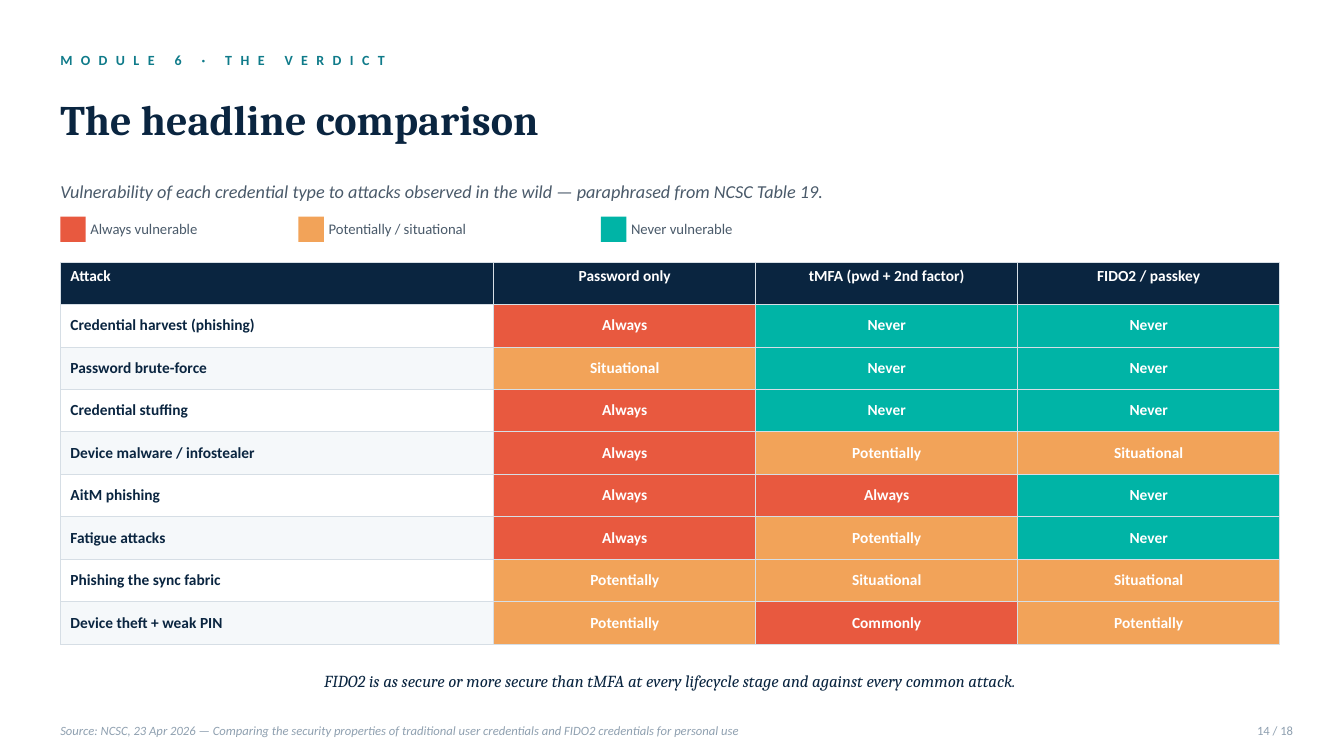
from dataclasses import dataclass

from lxml.etree import SubElement
from pptx import Presentation
from pptx.dml.color import RGBColor
from pptx.enum.shapes import MSO_SHAPE
from pptx.enum.text import MSO_ANCHOR, MSO_AUTO_SIZE, PP_ALIGN
from pptx.oxml.ns import qn
from pptx.util import Cm, Pt

# Content
EYEBROW = "MODULE 6 · THE VERDICT"
TITLE = "The headline comparison"
SUBTITLE = ("Vulnerability of each credential type to attacks observed in the wild"
            " — paraphrased from NCSC Table 19.")
LEGEND = [  # label, rating colour, left in cm
    ("Always vulnerable", "high", 1.52),
    ("Potentially / situational", "medium", 7.52),
    ("Never vulnerable", "low", 15.14),
]
HEADERS = ["Attack", "Password only", "tMFA (pwd + 2nd factor)", "FIDO2 / passkey"]
ATTACKS = [
    ("Credential harvest (phishing)", "Always", "Never", "Never"),
    ("Password brute-force", "Situational", "Never", "Never"),
    ("Credential stuffing", "Always", "Never", "Never"),
    ("Device malware / infostealer", "Always", "Potentially", "Situational"),
    ("AitM phishing", "Always", "Always", "Never"),
    ("Fatigue attacks", "Always", "Potentially", "Never"),
    ("Phishing the sync fabric", "Potentially", "Situational", "Situational"),
    ("Device theft + weak PIN", "Potentially", "Commonly", "Potentially"),
]
RATING_LEVEL = {"Always": "high", "Commonly": "high", "Potentially": "medium",
                "Situational": "medium", "Never": "low"}
TAKEAWAY = ("FIDO2 is as secure or more secure than tMFA at every lifecycle stage"
            " and against every common attack.")
SOURCE = ("Source: NCSC, 23 Apr 2026 — Comparing the security properties of traditional"
          " user credentials and FIDO2 credentials for personal use")
PAGE = "14 / 18"


@dataclass(frozen=True)
class Theme:
    navy: str = "0A2540"
    teal: str = "0F7B8A"
    slate: str = "4A5A6A"
    muted: str = "8FA0B0"
    white: str = "FFFFFF"
    stripe: str = "F5F8FA"
    border: str = "D6DEE5"
    high: str = "E8593F"
    medium: str = "F2A359"
    low: str = "00B4A6"
    body: str = "Calibri"
    heading: str = "Cambria"
    eyebrow_size: float = 10
    title_size: float = 30
    subtitle_size: float = 13
    legend_size: float = 10.5
    table_size: float = 11
    takeaway_size: float = 12
    footer_size: float = 9


THEME = Theme()
LEFT, WIDTH = 1.52, 30.73
ROW_HEIGHT = 1.07
COLUMN_WIDTHS = [10.92, 6.6, 6.6, 6.6]


def style(size, color, name=THEME.body, bold=False, italic=False):
    return {"size": Pt(size), "name": name, "bold": bold, "italic": italic,
            "color": color}


def write(text_frame, text, font_style, alignment=PP_ALIGN.LEFT):
    paragraph = text_frame.paragraphs[0]
    paragraph.alignment = alignment
    run = paragraph.add_run()
    run.text = text
    for attribute, value in font_style.items():
        if attribute == "color":
            run.font.color.rgb = RGBColor.from_string(value)
        else:
            setattr(run.font, attribute, value)
    return run


def fill_with(target, color):
    target.fill.solid()
    target.fill.fore_color.rgb = RGBColor.from_string(color)


def format_frame(text_frame):
    frame_format = {"margin_left": 0, "margin_right": 0, "margin_top": 0,
                    "margin_bottom": 0, "word_wrap": True,
                    "auto_size": MSO_AUTO_SIZE.NONE,
                    "vertical_anchor": MSO_ANCHOR.MIDDLE}
    for attribute, value in frame_format.items():
        setattr(text_frame, attribute, value)


def add_label(slide, box, text, font_style, alignment=PP_ALIGN.LEFT):
    shape = slide.shapes.add_textbox(*map(Cm, box))
    format_frame(shape.text_frame)
    return write(shape.text_frame, text, font_style, alignment)


def add_borders(cell):
    properties = cell._tc.get_or_add_tcPr()
    for position, side in enumerate(("a:lnL", "a:lnR", "a:lnT", "a:lnB")):
        line = SubElement(properties, qn(side), w=str(Pt(0.5)))
        SubElement(SubElement(line, qn("a:solidFill")), qn("a:srgbClr"),
                   val=THEME.border)
        properties.insert(position, line)


def add_heading(slide):
    eyebrow = add_label(slide, (LEFT, 1.14, 30.48, 0.76), EYEBROW,
                        style(THEME.eyebrow_size, THEME.teal, bold=True))
    eyebrow.font._element.set("spc", "600")

    title = slide.shapes.title
    title.left, title.top, title.width, title.height = map(
        Cm, (LEFT, 1.9, WIDTH, 2.16))
    format_frame(title.text_frame)
    write(title.text_frame, TITLE,
          style(THEME.title_size, THEME.navy, THEME.heading, bold=True))

    add_label(slide, (LEFT, 4.32, 30.48, 1.02), SUBTITLE,
              style(THEME.subtitle_size, THEME.slate, italic=True))


def add_legend(slide):
    for label, level, left in LEGEND:
        swatch = slide.shapes.add_shape(
            MSO_SHAPE.RECTANGLE, *map(Cm, (left, 5.46, 0.64, 0.64)))
        swatch.shadow.inherit = False
        fill_with(swatch, getattr(THEME, level))
        swatch.line.fill.background()
        add_label(slide, (left + 0.76, 5.36, 6.35, 0.81), label,
                  style(THEME.legend_size, THEME.slate))


def add_comparison(slide):
    rows = [HEADERS, *ATTACKS]
    table = slide.shapes.add_table(
        len(rows), len(HEADERS), Cm(LEFT), Cm(6.6), Cm(WIDTH),
        Cm(ROW_HEIGHT * len(rows))).table
    for column, width in zip(table.columns, COLUMN_WIDTHS):
        column.width = Cm(width)

    for row_index, values in enumerate(rows):
        table.rows[row_index].height = Cm(ROW_HEIGHT)
        for column_index, value in enumerate(values):
            cell = table.cell(row_index, column_index)
            text_color = THEME.white
            if row_index == 0:
                fill = THEME.navy
            elif column_index == 0:
                fill = THEME.white if row_index % 2 else THEME.stripe
                text_color = THEME.navy
            else:
                fill = getattr(THEME, RATING_LEVEL[value])
            fill_with(cell, fill)
            add_borders(cell)
            cell.vertical_anchor = MSO_ANCHOR.MIDDLE if row_index else MSO_ANCHOR.TOP
            write(cell.text_frame, value,
                  style(THEME.table_size, text_color, bold=True),
                  PP_ALIGN.CENTER if column_index else PP_ALIGN.LEFT)


def add_footer(slide):
    add_label(slide, (LEFT, 16.64, WIDTH, 1.02), TAKEAWAY,
              style(THEME.takeaway_size, THEME.navy, THEME.heading, italic=True),
              PP_ALIGN.CENTER)
    add_label(slide, (LEFT, 18.03, 26.67, 0.76), SOURCE,
              style(THEME.footer_size, THEME.muted, italic=True))
    add_label(slide, (31.06, 18.03, 1.52, 0.76), PAGE,
              style(THEME.footer_size, THEME.muted), PP_ALIGN.RIGHT)


def main():
    presentation = Presentation()
    presentation.slide_width, presentation.slide_height = Cm(33.86), Cm(19.05)
    slide = presentation.slides.add_slide(presentation.slide_layouts[5])
    fill_with(slide.background, THEME.white)
    add_heading(slide)
    add_legend(slide)
    add_comparison(slide)
    add_footer(slide)
    presentation.save("out.pptx")


if __name__ == "__main__":
    main()
